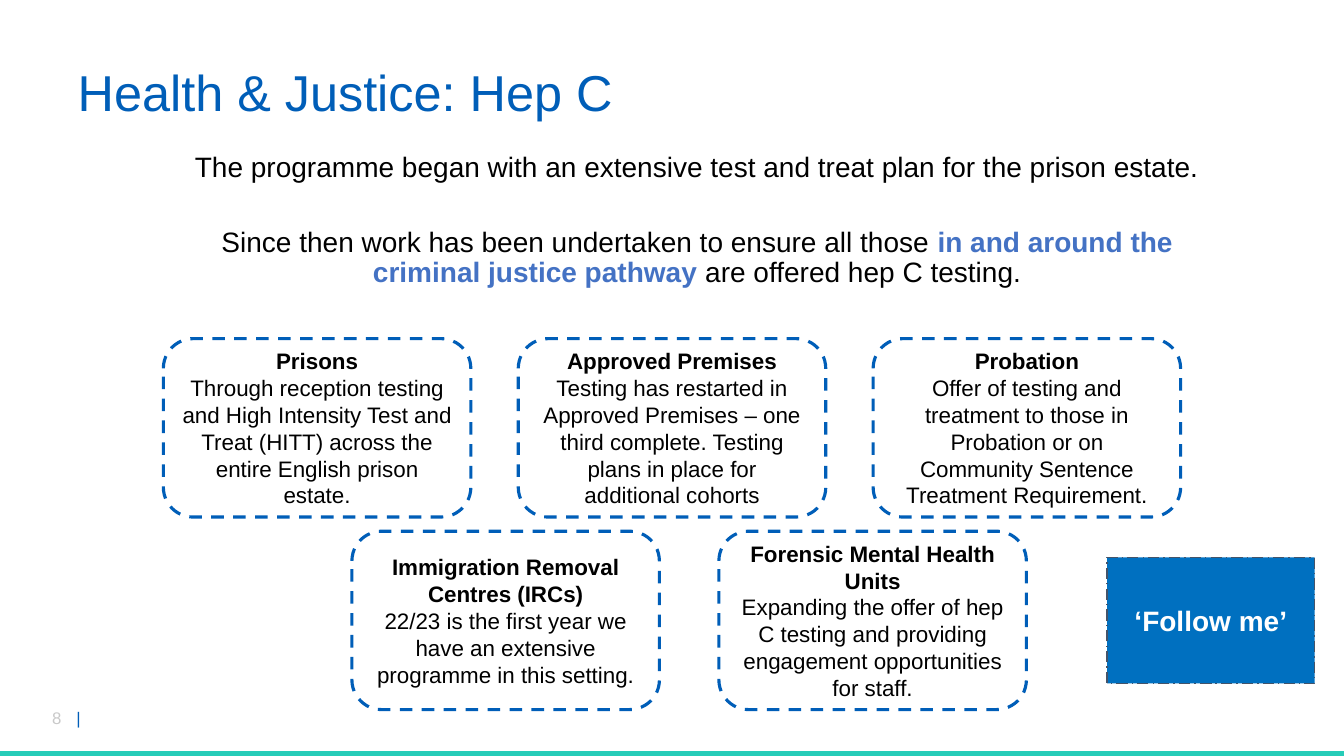
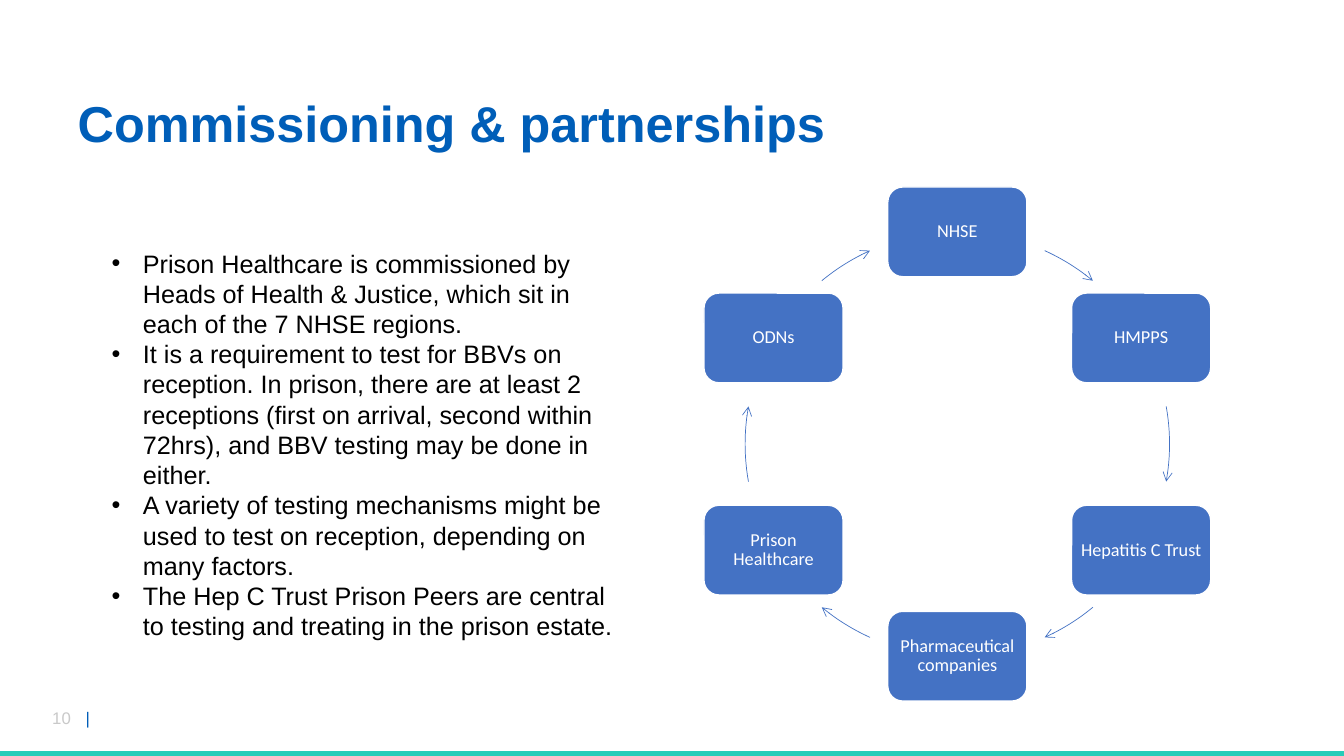
from dataclasses import dataclass
from math import cos, radians, sin

from lxml.etree import SubElement
from pptx import Presentation
from pptx.dml.color import RGBColor
from pptx.enum.dml import MSO_LINE
from pptx.enum.shapes import MSO_CONNECTOR, MSO_SHAPE
from pptx.enum.text import MSO_ANCHOR, MSO_AUTO_SIZE, PP_ALIGN
from pptx.oxml.ns import qn
from pptx.util import Emu, Pt

SCALE = 9144  # EMU in one px: 100 px to the inch


@dataclass(frozen=True)
class Theme:
    blue: str = "005EB8"
    fill: str = "0070C0"
    node: str = "4472C4"
    slate: str = "44546A"
    teal: str = "26CCB8"
    grey: str = "C9C9C9"
    black: str = "000000"
    white: str = "FFFFFF"
    font: str = "Arial"
    ring: str = "Calibri"
    title: int = 36
    lead: int = 20
    body: int = 18
    card: int = 16
    label: int = 13
    foot: int = 12


T = Theme()

CARDS = [
    (162, 336, 352, [
        ("Prisons", "Through reception testing and High Intensity Test and "
                    "Treat (HITT) across the entire English prison estate."),
        ("Approved Premises", "Testing has restarted in Approved Premises – one third "
                              "complete. Testing plans in place for additional cohorts"),
        ("Probation", "Offer of testing and treatment to those in Probation or on "
                      "Community Sentence Treatment Requirement."),
    ]),
    (349, 527, 364, [
        ("Immigration Removal Centres (IRCs)",
         "22/23 is the first year we have an extensive programme in this setting."),
        ("Forensic Mental Health Units",
         "Expanding the offer of hep C testing and providing engagement "
         "opportunities for staff."),
    ]),
]

POINTS = [
    "Prison Healthcare is commissioned by Heads of Health & Justice, which sit in "
    "each of the 7 NHSE regions.",
    "It is a requirement to test for BBVs on reception. In prison, there are at least "
    "2 receptions (first on arrival, second within 72hrs), and BBV testing may be "
    "done in either.",
    "A variety of testing mechanisms might be used to test on reception, depending on "
    "many factors.",
    "The Hep C Trust Prison Peers are central to testing and treating in the prison "
    "estate.",
]

NODES = ["NHSE", "HMPPS", "Hepatitis C Trust", "Pharmaceutical companies",
         "Prison Healthcare", "ODNs"]

# Left, top and diameter of the ring
RING = (739, 230, 421)

# Middle angle and half sweep of each arrow in the ring, in degrees
ARCS = [(-58, 7.7), (0, 10.2), (58, 7.7), (122, 7.7), (180, 10.2), (238, 7.7)]


def px(num):
    return Emu(round(num * SCALE))


def rgb(code):
    return RGBColor.from_string(code)


def write(frame, paras, size=T.body, color=T.black, font=T.font, bold=False,
          align=PP_ALIGN.LEFT, anchor=MSO_ANCHOR.TOP, gap=0, lines=None,
          bullet=0, tab=0, inset=None):
    """Fill a frame; each paragraph is a list of (text, overrides) runs."""
    frame.word_wrap = True
    frame.auto_size = MSO_AUTO_SIZE.NONE
    frame.vertical_anchor = anchor
    if inset is not None:
        frame.margin_left = frame.margin_right = px(inset)
        frame.margin_top = frame.margin_bottom = px(inset)
    for i, runs in enumerate(paras):
        para = frame.paragraphs[0] if i == 0 else frame.add_paragraph()
        para.alignment = align
        para.space_before = Pt(gap if i else 0)
        if lines:
            para.line_spacing = lines
        props = para._p.get_or_add_pPr()
        if bullet:
            props.set("marL", str(px(bullet)))
            props.set("indent", str(px(-bullet)))
            SubElement(props, qn("a:buFont"), typeface=T.font)
            SubElement(props, qn("a:buChar"), char="•")
        if tab:
            stops = SubElement(props, qn("a:tabLst"))
            SubElement(stops, qn("a:tab"), pos=str(px(tab)), algn="l")
        for text, over in runs:
            run = para.add_run()
            run.text = text
            run.font.name = font
            run.font.size = Pt(size)
            run.font.bold = over.get("bold", bold)
            run.font.color.rgb = rgb(over.get("color", color))


def label(slide, box, paras, **form):
    area = slide.shapes.add_textbox(*map(px, box))
    write(area.text_frame, paras, **form)


def block(slide, kind, box, paras, fill=None, line=T.white, width=1, dash=None, **form):
    """Add a preset shape with centred text."""
    shape = slide.shapes.add_shape(kind, *map(px, box))
    shape.shadow.inherit = False
    if fill:
        shape.fill.solid()
        shape.fill.fore_color.rgb = rgb(fill)
    else:
        shape.fill.background()
    shape.line.color.rgb = rgb(line)
    shape.line.width = Pt(width)
    if dash:
        shape.line.dash_style = dash
    write(shape.text_frame, paras, align=PP_ALIGN.CENTER,
          anchor=MSO_ANCHOR.MIDDLE, **form)


def orbit(angle):
    """Give the point of the ring at an angle in degrees."""
    left, top, size = RING
    turn = radians(angle)
    return left + size / 2 * (1 + cos(turn)), top + size / 2 * (1 + sin(turn))


def frame_ring(shape):
    """Widen the frame of an arc to the whole ring, leaving the curve in place."""
    left, top, size = map(px, RING)
    shift = {"x": shape.left - left, "y": shape.top - top}
    route = shape._element.spPr.find(".//" + qn("a:path"))
    for spot in route.iter(qn("a:pt")):
        for axis, move in shift.items():
            spot.set(axis, str(int(spot.get(axis)) + move))
    route.set("w", str(size))
    route.set("h", str(size))
    shape.left, shape.top, shape.width, shape.height = left, top, size, size


def arc(slide, mid, half):
    """Draw a curved arrow clockwise along the ring."""
    steps = 12
    spots = [tuple(map(px, orbit(mid - half + 2 * half * i / steps)))
             for i in range(steps + 1)]
    pen = slide.shapes.build_freeform(*spots[0], scale=1.0)
    pen.add_line_segments(spots[1:], close=False)
    shape = pen.convert_to_shape()
    frame_ring(shape)
    shape.shadow.inherit = False
    shape.fill.background()
    shape.line.color.rgb = rgb(T.node)
    shape.line.width = Pt(0.5)
    SubElement(shape._element.spPr.find(qn("a:ln")), qn("a:tailEnd"), type="arrow")


def start(deck, text, box, page, bold=False):
    """Add a slide with its title, bottom band and page number."""
    slide = deck.slides.add_slide(deck.slide_layouts[5])
    title = slide.shapes.title
    title.left, title.top, title.width, title.height = map(px, box)
    write(title.text_frame, [[(text, {})]], size=T.title, color=T.blue, bold=bold,
          anchor=MSO_ANCHOR.MIDDLE, lines=0.9)
    band = slide.shapes.add_connector(MSO_CONNECTOR.STRAIGHT,
                                      *map(px, (-3, 748, 1336, 748)))
    band.line.color.rgb = rgb(T.teal)
    band.line.width = Pt(4.5)
    SubElement(band._element.spPr, qn("a:effectLst"))
    label(slide, (42, 697, 94, 30), [[(f"{page}\t", {}), ("|", {"color": T.blue})]],
          size=T.foot, color=T.grey, tab=15 + 9 * len(str(page)))
    return slide


def justice(deck):
    slide = start(deck, "Health & Justice: Hep C", (67, 61, 1103, 67), 8)
    label(slide, (165, 147, 1053, 177), [
        [("The programme began with an extensive test and treat plan for the "
          "prison estate.", {})],
        [("Since then work has been undertaken to ensure all those ", {}),
         ("in and around the criminal justice pathway ",
          {"color": T.node, "bold": True}),
         ("are offered hep C testing.", {})],
    ], size=T.lead, align=PP_ALIGN.CENTER, lines=0.9, gap=32)
    for left, top, step, cards in CARDS:
        for i, (head, text) in enumerate(cards):
            block(slide, MSO_SHAPE.ROUNDED_RECTANGLE, (left + i * step, top, 305, 177),
                  [[(head, {"bold": True})], [(text, {})]], line=T.blue, width=2.25,
                  dash=MSO_LINE.DASH, size=T.card)
    block(slide, MSO_SHAPE.RECTANGLE, (1098, 553, 206, 125), [[("‘Follow me’", {})]],
          fill=T.fill, line=T.slate, dash=MSO_LINE.LONG_DASH_DOT,
          size=T.lead, color=T.white, bold=True)


def partners(deck):
    slide = start(deck, "Commissioning & partnerships", (67, 92, 958, 67), 10, bold=True)
    label(slide, (101, 241, 524, 404), [[(text, {})] for text in POINTS], bullet=31)
    wide, high = 138, 89
    for i, name in enumerate(NODES):
        x, y = orbit(360 / len(NODES) * i - 90)
        block(slide, MSO_SHAPE.ROUNDED_RECTANGLE,
              (x - wide / 2, y - high / 2, wide, high), [[(name, {})]], fill=T.node,
              size=T.label, color=T.white, font=T.ring, lines=0.9, inset=5)
    for mid, half in ARCS:
        arc(slide, mid, half)


def main():
    deck = Presentation()
    deck.slide_width, deck.slide_height = px(1333), px(750)
    justice(deck)
    partners(deck)
    deck.save("out.pptx")


if __name__ == "__main__":
    main()
